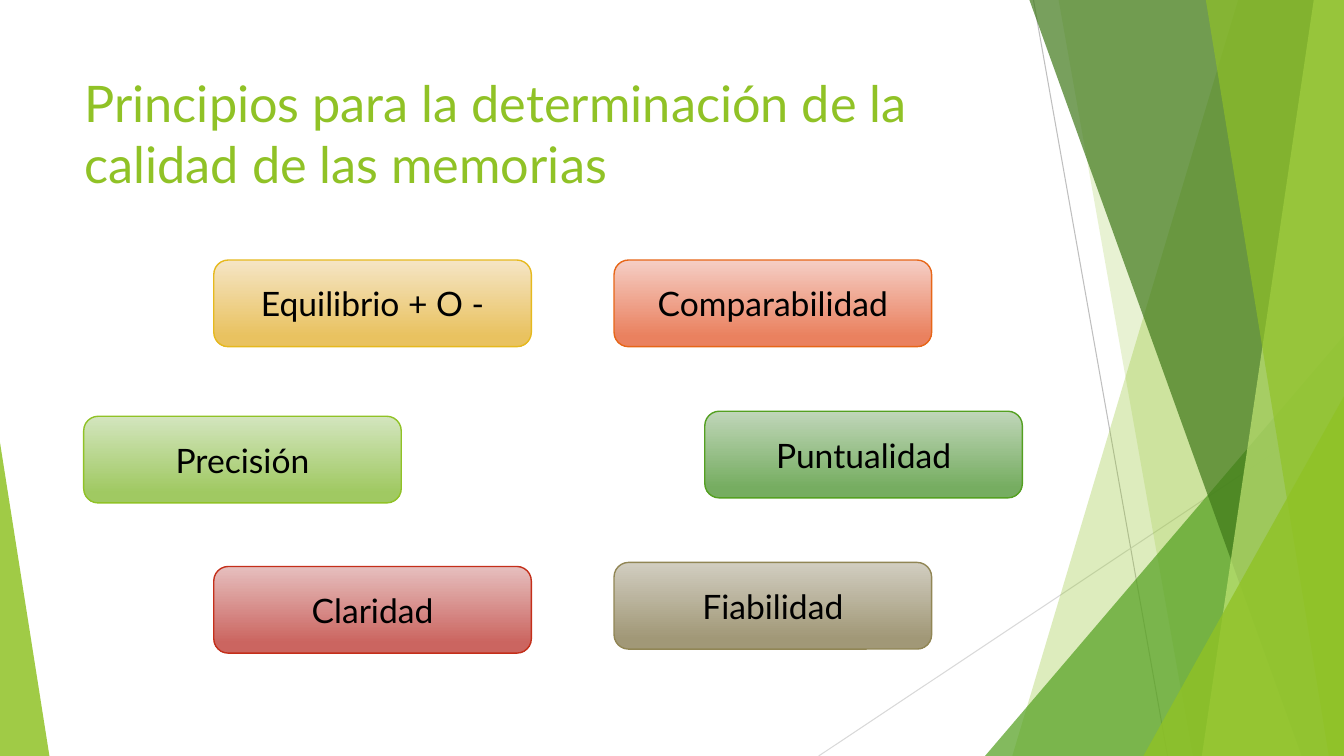
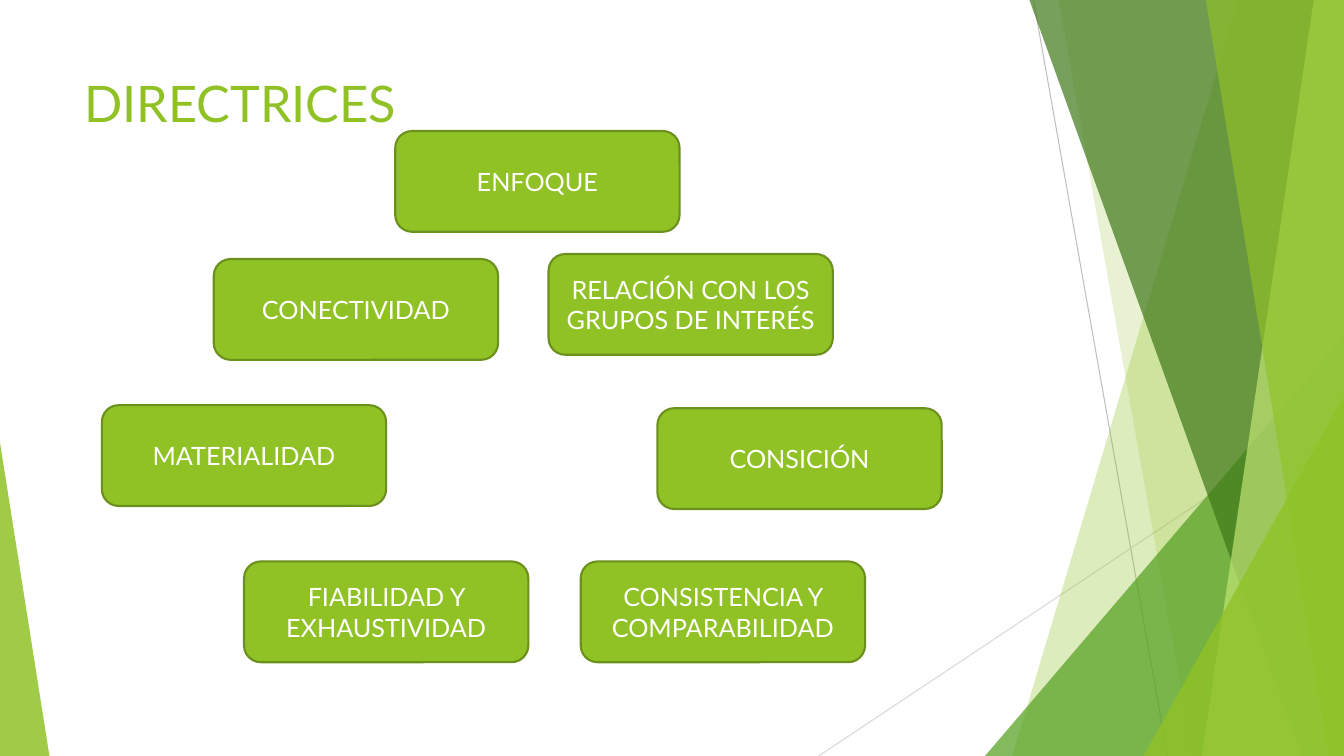
from lxml.etree import SubElement
from pptx import Presentation
from pptx.dml.color import RGBColor
from pptx.enum.shapes import MSO_CONNECTOR, MSO_SHAPE
from pptx.enum.text import MSO_ANCHOR as ANCHOR, PP_ALIGN as ALIGN
from pptx.oxml.ns import qn
from pptx.util import Pt

PX = 9144  # EMU per px, 100 px to the inch
WIDTH, HEIGHT = 1333, 750
FONT = "Lato"
LIME, GREEN, FOREST, PALE = "90C226", "54A021", "3F7819", "C0E474"
OLIVE, BLACK, WHITE = "6B901C", "000000", "FFFFFF"


def rgb(color):
    return RGBColor.from_string(color)


def write(sp, text, size=18, color=BLACK, align=ALIGN.LEFT, anchor=ANCHOR.TOP):
    tf = sp.text_frame
    tf.word_wrap = True
    tf.vertical_anchor = anchor
    p = tf.paragraphs[0]
    p.alignment = align
    r = p.add_run()
    r.text = text
    r.font.name, r.font.size = FONT, Pt(size)
    r.font.color.rgb = rgb(color)


class Deck:
    def __init__(self):
        self.prs = Presentation()
        self.prs.slide_width = WIDTH * PX
        self.prs.slide_height = HEIGHT * PX

    def slide(self, title, title_h):
        self.shapes = self.prs.slides.add_slide(self.prs.slide_layouts[6]).shapes
        self.backdrop()
        sp = self.shapes.add_textbox(74 * PX, 67 * PX, 940 * PX, title_h * PX)
        write(sp, title, size=36, color=LIME)

    def line(self, x1, y1, x2, y2, color):
        ln = self.shapes.add_connector(
            MSO_CONNECTOR.STRAIGHT, x1 * PX, y1 * PX, x2 * PX, y2 * PX)
        ln.line.color.rgb = rgb(color)
        ln.line.width = Pt(0.75)
        SubElement(ln._element.spPr, qn("a:effectLst"))

    def tint(self, sp, color, alpha):
        sp.shadow.inherit = False
        sp.line.fill.background()
        sp.fill.solid()
        sp.fill.fore_color.rgb = rgb(color)
        clr = sp._element.spPr.find(qn("a:solidFill"))[0]
        SubElement(clr, qn("a:alpha")).set("val", str(alpha * 1000))

    def band(self, top_x, bottom_x, color, alpha):
        """Full-height band from a slanted left edge to the slide's right edge."""
        path = self.shapes.build_freeform(top_x, 0, scale=PX)
        path.add_line_segments(
            [(WIDTH, 0), (WIDTH, HEIGHT), (bottom_x, HEIGHT)], close=True)
        self.tint(path.convert_to_shape(), color, alpha)

    def corner(self, x, y, w, apex, color, alpha):
        """Triangle standing on the bottom edge; apex 0 is left, 1 is right."""
        sp = self.shapes.add_shape(
            MSO_SHAPE.ISOSCELES_TRIANGLE, x * PX, y * PX, w * PX, (HEIGHT - y) * PX)
        sp.adjustments[0] = apex
        self.tint(sp, color, alpha)

    def backdrop(self):
        self.line(1025, 0, 1158, HEIGHT, "BFBFBF")
        self.line(WIDTH, 403, 812, HEIGHT, "D9D9D9")
        self.band(1228, 1004, LIME, 30)
        self.band(1050, 1183, LIME, 20)
        self.corner(977, 333, 356, 1, GREEN, 72)
        self.band(1021, 1291, FOREST, 70)
        self.band(1303, 1192, PALE, 70)
        self.band(1196, 1318, LIME, 65)
        self.corner(1134, 393, 199, 1, LIME, 80)
        self.corner(0, 439, 49, 0, LIME, 85)

    def box(self, x, y, w, h, text, border, border_w, fill, **fmt):
        """Rounded box; fill is one colour or a (top, bottom) gradient."""
        sp = self.shapes.add_shape(
            MSO_SHAPE.ROUNDED_RECTANGLE, x * PX, y * PX, w * PX, h * PX)
        sp.shadow.inherit = False
        if isinstance(fill, str):
            sp.fill.solid()
            sp.fill.fore_color.rgb = rgb(fill)
        else:
            sp.fill.gradient()
            sp.fill.gradient_angle = 270
            for stop, pos, color in zip(sp.fill.gradient_stops, (0, 0.88), fill):
                stop.position = pos
                stop.color.rgb = rgb(color)
        sp.line.color.rgb = rgb(border)
        sp.line.width = Pt(border_w)
        write(sp, text, align=ALIGN.CENTER, anchor=ANCHOR.MIDDLE, **fmt)


# x, y, text, border, gradient
PRINCIPLES = [
    (212, 258, "Equilibrio + O -", "E6B91E", ("F5E5C5", "E9C260")),
    (609, 258, "Comparabilidad", "E76618", ("F5CEC5", "EA815F")),
    (699, 408, "Puntualidad", GREEN, ("C0D6B9", "76AD61")),
    (83, 413, "Precisión", LIME, ("D3E5BE", "A0C962")),
    (609, 558, "Fiabilidad", "918655", ("D1CDC0", "A19877")),
    (212, 562, "Claridad", "C42F1A", ("E6BFBE", "CB6560")),
]

# x, y, text
GUIDELINES = [
    (392, 130, "ENFOQUE"),
    (212, 257, "CONECTIVIDAD"),
    (544, 252, "RELACIÓN CON LOS GRUPOS DE INTERÉS"),
    (652, 405, "CONSICIÓN"),
    (101, 402, "MATERIALIDAD"),
    (576, 557, "CONSISTENCIA Y COMPARABILIDAD"),
    (242, 557, "FIABILIDAD Y EXHAUSTIVIDAD"),
]


def main():
    deck = Deck()

    # Principles
    deck.slide("Principios para la determinación de la calidad de las memorias", 144)
    for x, y, text, border, gradient in PRINCIPLES:
        deck.box(x, y, 315, 86, text, border, 1, gradient, size=24)

    # Guidelines
    deck.slide("DIRECTRICES", 103)
    for x, y, text in GUIDELINES:
        deck.box(x, y, 282, 100, text, OLIVE, 1.5, LIME, color=WHITE)

    deck.prs.save("out.pptx")


if __name__ == "__main__":
    main()
